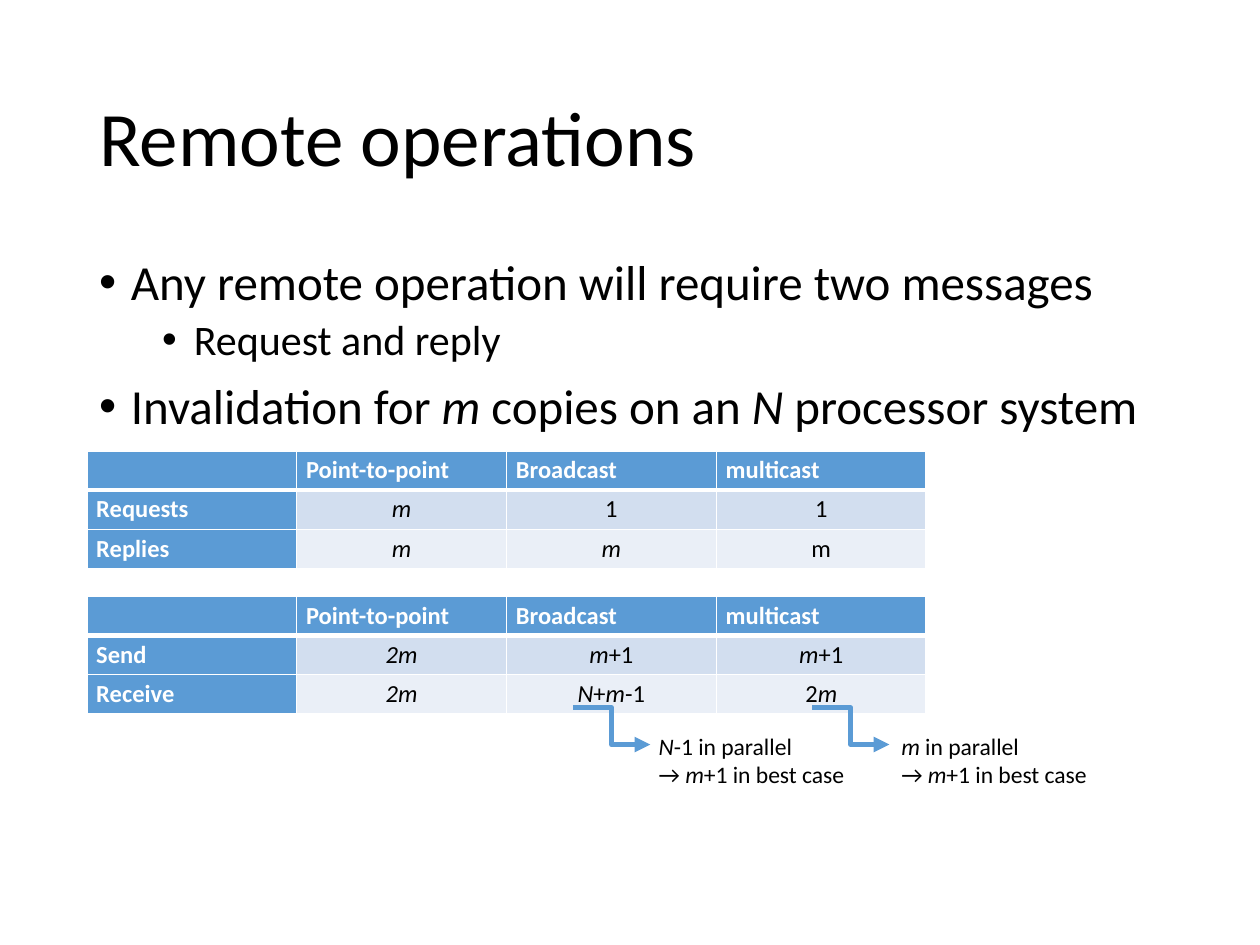
import dataclasses

import lxml.etree
import pptx
import pptx.dml.color
import pptx.enum.shapes
import pptx.enum.text
import pptx.oxml.ns
import pptx.util

Cm = pptx.util.Cm
Pt = pptx.util.Pt
qn = pptx.oxml.ns.qn
Align = pptx.enum.text.PP_ALIGN
Anchor = pptx.enum.text.MSO_ANCHOR


@dataclasses.dataclass(frozen=True)
class Theme:
    font: str = "Calibri"
    text: str = "000000"
    light: str = "FFFFFF"
    accent: str = "5B9BD5"
    bands: tuple = ("D2DEEF", "EAEFF7")
    title_size: float = 44
    bullet_sizes: tuple = (28, 24)
    table_size: float = 14
    note_size: float = 13.5
    grid_width: float = 1
    header_rule_width: float = 3
    arrow_width: float = 3


def rgb(value):
    return pptx.dml.color.RGBColor.from_string(value)


class SlideBuilder:
    def __init__(self, presentation, theme):
        self.theme = theme
        self.slide = presentation.slides.add_slide(presentation.slide_layouts[5])

    def set_text(self, paragraph, text, size, color, bold=False):
        """Fill a paragraph; parts between asterisks are italic."""
        font = paragraph.font
        font.name, font.size, font.bold = self.theme.font, Pt(size), bold
        font.color.rgb = rgb(color)
        for index, part in enumerate(text.split("*")):
            if part:
                run = paragraph.add_run()
                run.text = part
                if index % 2:
                    run.font.italic = True

    def title(self, text, left, top, width, height):
        shape = self.slide.shapes.title
        shape.left, shape.top = Cm(left), Cm(top)
        shape.width, shape.height = Cm(width), Cm(height)
        shape.text_frame.vertical_anchor = Anchor.MIDDLE
        paragraph = shape.text_frame.paragraphs[0]
        paragraph.alignment = Align.LEFT
        paragraph.line_spacing = 0.9
        self.set_text(paragraph, text, self.theme.title_size, self.theme.text)

    def text_box(self, left, top, width, height, lines, size, wrap):
        shape = self.slide.shapes.add_textbox(Cm(left), Cm(top), Cm(width), Cm(height))
        frame = shape.text_frame
        frame.word_wrap = wrap
        paragraphs = [frame.paragraphs[0]] + [frame.add_paragraph() for _ in lines[1:]]
        for paragraph, line in zip(paragraphs, lines):
            self.set_text(paragraph, line, size, self.theme.text)
        return paragraphs

    def bullets(self, left, top, width, height, items):
        sizes = self.theme.bullet_sizes
        lines = [text for _, text in items]
        paragraphs = self.text_box(left, top, width, height, lines, sizes[0], True)
        for paragraph, (level, _) in zip(paragraphs, items):
            paragraph.level = level
            paragraph.font.size = Pt(sizes[level])
            paragraph.line_spacing = 0.9
            paragraph.space_before = Pt((10, 5)[level])
            properties = paragraph._p.get_or_add_pPr()
            properties.set("marL", str(Cm(0.64 + 1.27 * level)))
            properties.set("indent", str(Cm(-0.64)))
            bullet_font = lxml.etree.Element(qn("a:buFont"), typeface="Arial")
            bullet = lxml.etree.Element(qn("a:buChar"), char="•")
            default_font = properties.find(qn("a:defRPr"))
            default_font.addprevious(bullet_font)
            default_font.addprevious(bullet)

    def note(self, left, top, lines):
        self.text_box(left, top, 4.95, 1.42, lines, self.theme.note_size, False)

    def cell_borders(self, cell, is_header):
        properties = cell._tc.get_or_add_tcPr()
        for side in ("L", "R", "T", "B"):
            heavy = is_header and side == "B"
            width = self.theme.header_rule_width if heavy else self.theme.grid_width
            line = lxml.etree.SubElement(properties, qn(f"a:ln{side}"), w=str(Pt(width)))
            fill = lxml.etree.SubElement(line, qn("a:solidFill"))
            lxml.etree.SubElement(fill, qn("a:srgbClr"), val=self.theme.light)

    def table(self, left, top, column_width, row_height, rows):
        theme = self.theme
        count = len(rows[0])
        table = self.slide.shapes.add_table(
            len(rows), count, Cm(left), Cm(top),
            Cm(column_width * count), Cm(row_height * len(rows))).table
        table.first_col = True
        for row_index, row in enumerate(rows):
            table.rows[row_index].height = Cm(row_height)
            for column_index, text in enumerate(row):
                cell = table.cell(row_index, column_index)
                is_label = row_index == 0 or column_index == 0
                cell.margin_left = cell.margin_right = Cm(0.19)
                cell.margin_top = cell.margin_bottom = Cm(0.09)
                self.cell_borders(cell, row_index == 0)
                cell.fill.solid()
                cell.fill.fore_color.rgb = rgb(
                    theme.accent if is_label else theme.bands[(row_index - 1) % 2])
                paragraph = cell.text_frame.paragraphs[0]
                paragraph.alignment = Align.LEFT if is_label else Align.CENTER
                self.set_text(paragraph, text, theme.table_size,
                              theme.light if is_label else theme.text, is_label)
                if not text:
                    lxml.etree.SubElement(paragraph._p, qn("a:endParaRPr"),
                                          sz=str(int(theme.table_size * 100)))

    def elbow_arrow(self, left, top, width, height):
        connector = self.slide.shapes.add_connector(
            pptx.enum.shapes.MSO_CONNECTOR.ELBOW,
            Cm(left), Cm(top), Cm(left + width), Cm(top + height))
        connector.line.width = Pt(self.theme.arrow_width)
        connector.line.color.rgb = rgb(self.theme.accent)
        line = connector._element.spPr.find(qn("a:ln"))
        lxml.etree.SubElement(line, qn("a:tailEnd"), type="triangle")
        lxml.etree.SubElement(connector._element.spPr, qn("a:effectLst"))


def main():
    presentation = pptx.Presentation()
    presentation.slide_width, presentation.slide_height = Cm(25.4), Cm(19.05)
    builder = SlideBuilder(presentation, Theme())
    left, width = 1.75, 21.9

    builder.title("Remote operations", left, 1.01, width, 3.68)
    builder.bullets(left, 5.07, width, 12.09, [
        (0, "Any remote operation will require two messages"),
        (1, "Request and reply"),
        (0, "Invalidation for *m* copies on an *N* processor system"),
    ])

    header = ["", "Point-to-point", "Broadcast", "multicast"]
    tables = [
        (9.09, [["Requests", "*m*", "1", "1"],
                ["Replies", "*m*", "*m*", "m"]]),
        (12.02, [["Send", "*2m*", "*m*+1", "*m*+1"],
                 ["Receive", "*2m*", "*N*+*m*-1", "2*m*"]]),
    ]
    for top, rows in tables:
        builder.table(left, top, 4.23, 0.79, [header] + rows)

    notes = [(11.55, 13.03, "*N*-1 in parallel"), (16.37, 17.92, "*m* in parallel")]
    for arrow_left, note_left, text in notes:
        builder.note(note_left, 14.63, [text, "→ *m*+1 in best case"])
        builder.elbow_arrow(arrow_left, 14.27, 1.56, 0.74)

    presentation.save("out.pptx")


if __name__ == "__main__":
    main()
